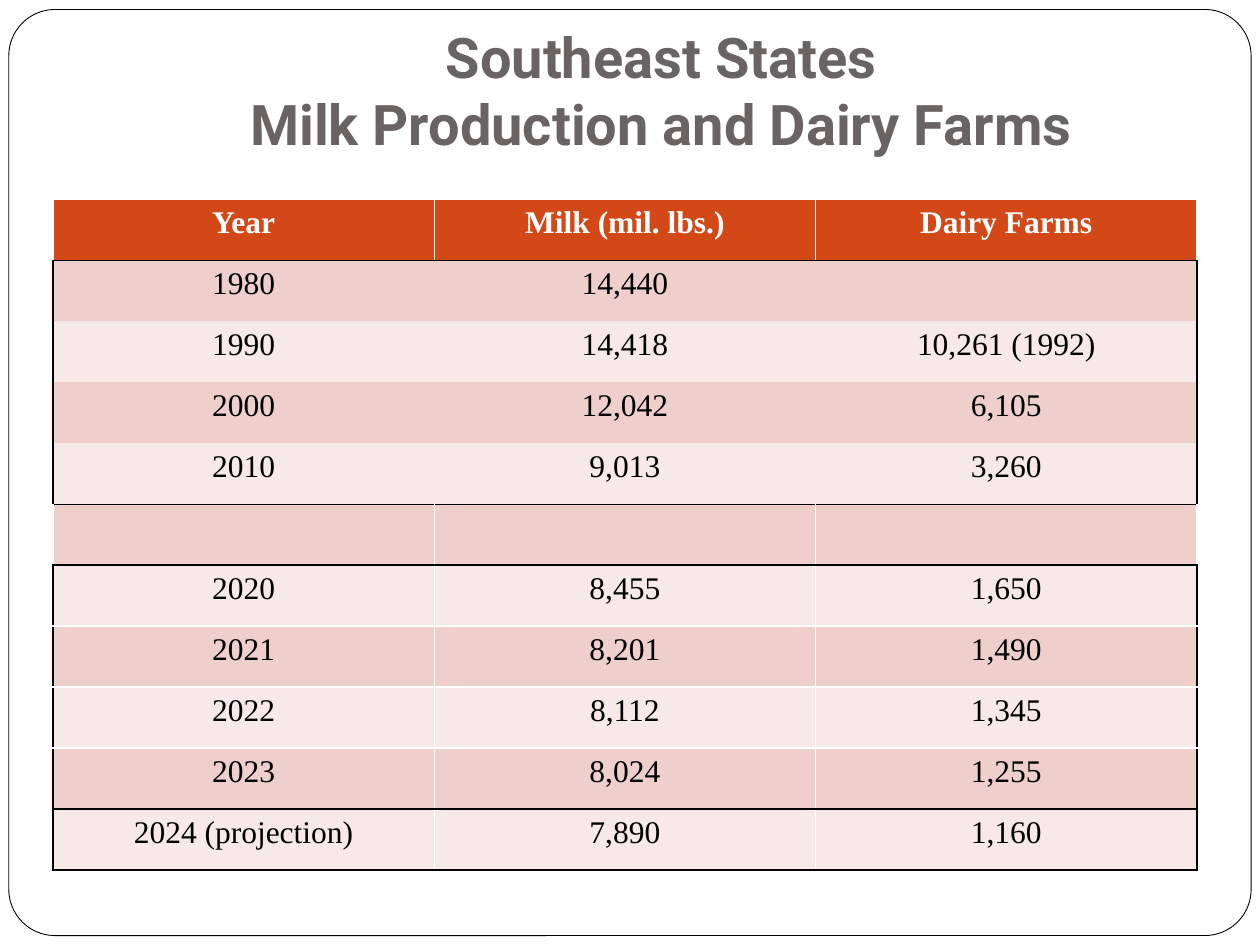
from lxml.etree import SubElement
from pptx import Presentation
from pptx.dml.color import RGBColor
from pptx.enum.shapes import MSO_SHAPE as SHAPE
from pptx.enum.text import MSO_ANCHOR as ANCHOR, MSO_AUTO_SIZE as AUTO, PP_ALIGN as ALIGN
from pptx.oxml.ns import qn
from pptx.util import Inches, Pt

WIDTH, HEIGHT = Inches(10), Inches(7.5)
BLACK, WHITE, GRAY = "000000", "FFFFFF", "696464"
HEADER, BANDS = "D34817", ("F7E9E8", "EFCFCC")
TITLE = ("Southeast States", "Milk Production and Dairy Farms")
ROWS = [
    ("Year", "Milk (mil. lbs.)", "Dairy Farms"),
    ("1980", "14,440", ""),
    ("1990", "14,418", "10,261 (1992)"),
    ("2000", "12,042", "6,105"),
    ("2010", "9,013", "3,260"),
    ("", "", ""),
    ("2020", "8,455", "1,650"),
    ("2021", "8,201", "1,490"),
    ("2022", "8,112", "1,345"),
    ("2023", "8,024", "1,255"),
    ("2024 (projection)", "7,890", "1,160"),
]
# first row, last row, outer side colour, inner rule colour
BLOCKS = [
    (0, 0, WHITE, WHITE),
    (1, 4, BLACK, None),
    (5, 5, WHITE, WHITE),
    (6, 9, BLACK, WHITE),
    (10, 10, BLACK, WHITE),
]


def rgb(color):
    return RGBColor.from_string(color)


def share(left, top, width, height):
    return int(left * WIDTH), int(top * HEIGHT), int(width * WIDTH), int(height * HEIGHT)


def style_run(r, font, size, color, bold):
    r.font.name, r.font.size, r.font.bold = font, Pt(size), bold
    r.font.color.rgb = rgb(color)


def add_frame(slide, box):
    sp = slide.shapes.add_shape(SHAPE.ROUNDED_RECTANGLE, *box)
    sp.adjustments[0] = 0.05
    sp.shadow.inherit = False
    sp.fill.solid()
    sp.fill.fore_color.rgb = rgb(WHITE)
    sp.line.color.rgb = rgb(BLACK)
    sp.line.width = Pt(0.5)
    tree = slide.shapes.title.element.getparent()
    tree.insert(2, sp.element)


def place_title(slide, box):
    sp = slide.shapes.title
    sp.left, sp.top, sp.width, sp.height = box
    tf = sp.text_frame
    tf.word_wrap, tf.auto_size = True, AUTO.NONE
    tf.vertical_anchor = ANCHOR.BOTTOM
    tf.margin_bottom = Inches(0.1)
    p = tf.paragraphs[0]
    p.alignment = ALIGN.CENTER
    for i, line in enumerate(TITLE):
        if i:
            p.add_line_break()
        r = p.add_run()
        r.text = line
        style_run(r, "Roboto", 32, GRAY, True)


def set_borders(cell, **colors):
    tc_pr = cell._tc.get_or_add_tcPr()
    for side in "LRTB":
        ln = SubElement(tc_pr, qn(f"a:ln{side}"), w=str(Pt(1)))
        if colors[side]:
            fill = SubElement(ln, qn("a:solidFill"))
            SubElement(fill, qn("a:srgbClr"), val=colors[side])
        else:
            SubElement(ln, qn("a:noFill"))


def fill_cell(cell, text, row):
    cell.fill.solid()
    cell.fill.fore_color.rgb = rgb(BANDS[row % 2] if row else HEADER)
    p = cell.text_frame.paragraphs[0]
    p.alignment = ALIGN.CENTER
    p.font.size = Pt(18)
    if text:
        r = p.add_run()
        r.text = text
        style_run(r, "Times New Roman", 18, BLACK if row else WHITE, not row)


def add_milk_table(slide, box):
    n_cols = len(ROWS[0])
    table = slide.shapes.add_table(len(ROWS), n_cols, *box).table
    for column in table.columns:
        column.width = box[2] // n_cols
    for row in table.rows:
        row.height = box[3] // len(ROWS)
    for first, last, outer, inner in BLOCKS:
        for i in range(first, last + 1):
            for j, text in enumerate(ROWS[i]):
                cell = table.cell(i, j)
                set_borders(
                    cell,
                    L=inner if j else outer,
                    R=inner if j < n_cols - 1 else outer,
                    T=inner if i > first else BLACK if i else WHITE,
                    B=inner if i < last else BLACK,
                )
                fill_cell(cell, text, i)


def main():
    prs = Presentation()
    prs.slide_width, prs.slide_height = WIDTH, HEIGHT
    slide = prs.slides.add_slide(prs.slide_layouts[5])
    add_frame(slide, share(0.007, 0.01, 0.986, 0.98))
    place_title(slide, share(0.1, 0.023, 0.85, 0.156))
    add_milk_table(slide, share(0.042, 0.211, 0.908, 0.71))
    prs.save("out.pptx")


if __name__ == "__main__":
    main()
